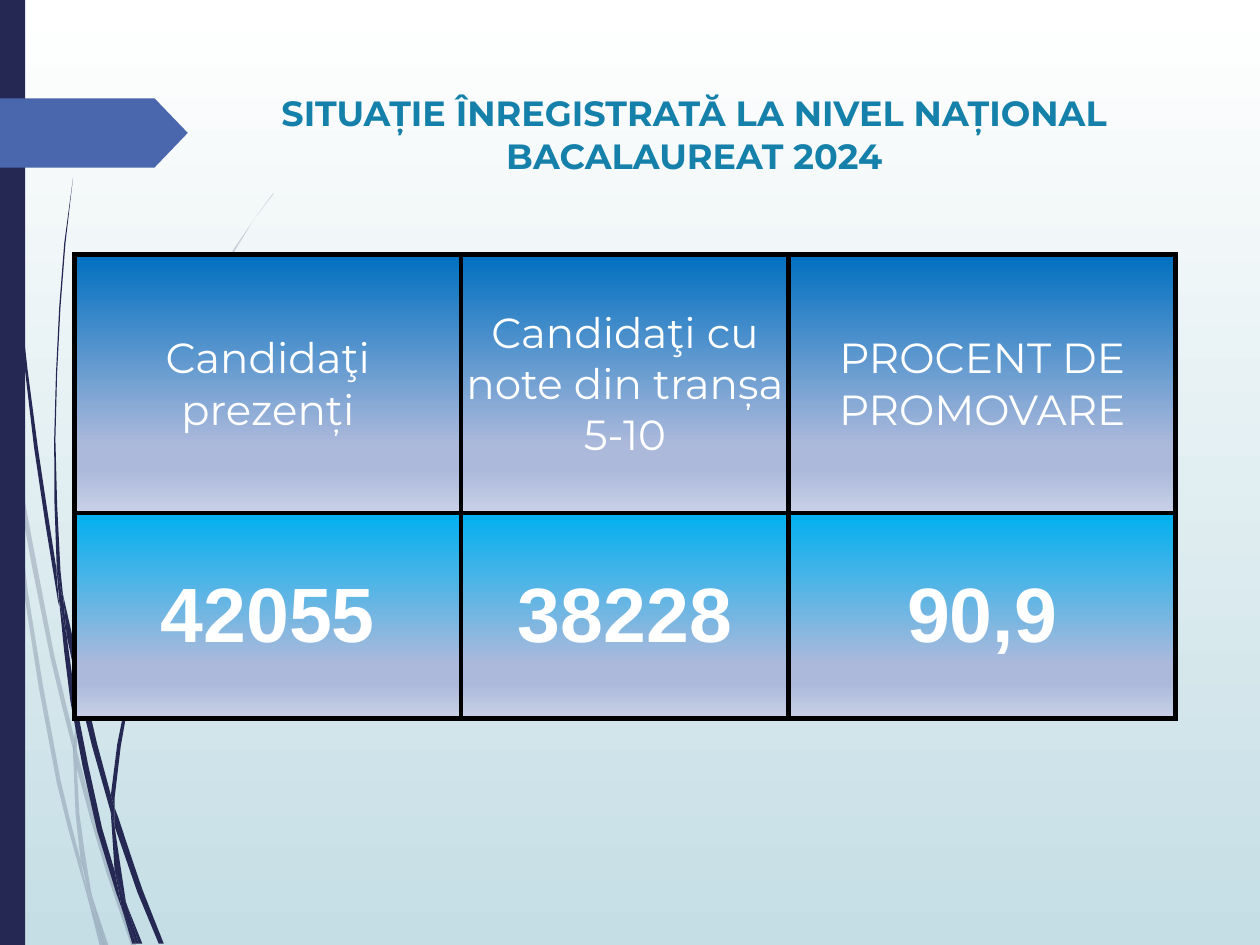
import math

from lxml import etree
from pptx import Presentation
from pptx import util as u
from pptx.dml.color import RGBColor
from pptx.enum import shapes, text
from pptx.oxml.ns import qn

PX = 9144  # 100 px to the inch
NAVY, BLUE, TEAL, WHITE, BLACK = "242852", "4A66AC", "1581AA", "FFFFFF", "000000"
CELL_TAIL = [(74, "ACB9DB"), (83, "ACB9DB"), (100, "C8D1E7")]

# Outline points of each blade of grass, in px
PALE_BLADES = [
    [(8, 350), (6, 322), (0, 282), (0, 299), (7, 344)],
    [(40, 522), (59, 599), (59, 586), (43, 520), (10, 345), (12, 376)],
    [(64, 607), (61, 596), (61, 610), (85, 694), (104, 750), (108, 750), (88, 692)],
    [(83, 750), (86, 750), (73, 711)],
    [(64, 683), (48, 619), (22, 469), (12, 376), (8, 350), (19, 470), (45, 621),
     (64, 693), (70, 714), (69, 707)],
    [(58, 599), (60, 646), (64, 683), (67, 692), (73, 711), (72, 706), (63, 646),
     (61, 610), (61, 608)],
    [(61, 584), (76, 462), (111, 349), (159, 245), (187, 198), (201, 175), (217, 154),
     (217, 153), (201, 175), (186, 197), (158, 244), (110, 348), (75, 461), (59, 584),
     (59, 586), (61, 596)],
    [(70, 714), (79, 750), (82, 750)],
    [(61, 608), (61, 610), (61, 596), (59, 586), (58, 599)],
    [(67, 692), (65, 683), (69, 707), (70, 714), (82, 750), (83, 750), (73, 711)],
]
DARK_BLADES = [
    [(5, 110), (14, 233), (27, 355), (46, 477), (47, 481), (45, 457), (45, 453),
     (30, 355), (15, 232), (6, 109), (4, 48), (3, 0), (2, 0), (3, 48)],
    [(73, 592), (88, 645), (88, 633), (88, 631), (77, 590), (50, 472), (53, 505)],
    [(94, 649), (91, 641), (91, 656), (109, 708), (126, 749), (130, 749), (113, 706)],
    [(91, 691), (81, 657), (60, 556), (53, 505), (47, 477), (56, 557), (77, 659),
     (92, 708), (97, 722), (96, 717)],
    [(50, 472), (48, 453), (44, 349), (48, 244), (52, 193), (58, 141), (51, 193),
     (47, 244), (43, 349), (45, 449), (49, 472)],
    [(110, 749), (113, 749), (101, 719)],
    [(47, 477), (53, 505), (50, 472), (49, 472), (45, 449), (45, 453)],
    [(91, 633), (103, 552), (131, 476), (169, 406), (191, 374), (203, 359), (216, 344),
     (215, 344), (203, 358), (191, 373), (168, 405), (129, 474), (101, 551), (88, 631),
     (91, 641)],
    [(97, 722), (105, 749), (108, 749)],
    [(88, 645), (91, 691), (96, 706), (101, 719), (100, 716), (91, 656), (90, 651)],
    [(88, 645), (90, 651), (91, 656), (91, 641), (88, 631), (88, 633)],
    [(96, 706), (91, 691), (96, 717), (97, 722), (108, 749), (110, 749), (101, 719)],
]


def px(n):
    return u.Emu(round(n * PX))


def color(h):
    return RGBColor.from_string(h)


def gradient(fill, stops):
    """Fill from top to bottom through (percent, colour) stops."""
    fill.gradient()
    fill.gradient_angle = 270
    gs_list = fill._fill._gradFill.find(qn("a:gsLst"))
    for gs in list(gs_list):
        gs_list.remove(gs)
    for pos, h in stops:
        gs = etree.SubElement(gs_list, qn("a:gs"), pos=str(pos * 1000))
        etree.SubElement(gs, qn("a:srgbClr"), val=h)


def paint(sp, h, opacity=100):
    sp.shadow.inherit = False
    sp.fill.solid()
    sp.fill.fore_color.rgb = color(h)
    sp.line.fill.background()
    if opacity < 100:
        clr = sp._element.spPr.find(qn("a:solidFill"))[0]
        etree.SubElement(clr, qn("a:alpha"), val=str(opacity * 1000))


def write(tf, words, size, font, h, bold=False, anchor=None):
    tf.word_wrap = True
    tf.vertical_anchor = anchor
    p = tf.paragraphs[0]
    p.alignment = text.PP_ALIGN.CENTER
    for i, line in enumerate(words.split("\n")):
        if i:
            p.add_line_break()
        r = p.add_run()
        r.text = line
        r.font.size, r.font.name, r.font.bold = u.Pt(size), font, bold
        r.font.color.rgb = color(h)


def unit(a, b):
    d = math.dist(a, b) or 1
    return (b[0] - a[0]) / d, (b[1] - a[1]) / d


def smooth(points, long=60):
    """Bend the long sides of a closed outline, keeping sharp tips."""
    n = len(points)

    def tangent(i, chord):
        a, b, c = points[i - 1], points[i], points[(i + 1) % n]
        v, w = unit(a, b), unit(b, c)
        return chord if v[0] * w[0] + v[1] * w[1] < 0.8 else unit(a, c)

    result = []
    for i, a in enumerate(points):
        j = (i + 1) % n
        b = points[j]
        result.append(a)
        length = math.dist(a, b)
        if length > long:
            chord = unit(a, b)
            start, end = tangent(i, chord), tangent(j, chord)
            result.append(tuple((a[m] + b[m]) / 2 + length / 8 * (start[m] - end[m])
                                for m in (0, 1)))
    return result


def add_grass(s, x, y, blades, opacity):
    group = s.shapes.add_group_shape()
    for blade in blades:
        outline = [(px(x + a), px(y + b)) for a, b in smooth(blade)]
        fb = group.shapes.build_freeform(*outline[0])
        fb.add_line_segments(outline[1:], close=True)
        paint(fb.convert_to_shape(), NAVY, opacity)


def add_side_band(s, x, y, w, h):
    bar = s.shapes.add_shape(shapes.MSO_SHAPE.RECTANGLE, px(x), px(y), px(w), px(h))
    paint(bar, NAVY)
    tag = s.shapes.add_shape(shapes.MSO_SHAPE.PENTAGON, px(x), px(y + 78), px(149), px(55))
    tag.adjustments[0] = 0.48
    paint(tag, BLUE)


def add_title(s, x, y, w, h):
    title = s.shapes.title
    title.left, title.top, title.width, title.height = map(px, (x, y, w, h))
    write(title.text_frame, "SITUAȚIE ÎNREGISTRATĂ LA NIVEL NAȚIONAL\nBACALAUREAT 2024",
          20, "Montserrat", TEAL, bold=True, anchor=text.MSO_ANCHOR.TOP)
    s.shapes._spTree.append(title._element)  # in front of the grass


def add_borders(cell, h, points):
    tc_pr = cell._tc.get_or_add_tcPr()
    for i, side in enumerate(("lnL", "lnR", "lnT", "lnB")):
        ln = etree.Element(qn("a:" + side), w=str(int(u.Pt(points))))
        fill = etree.SubElement(ln, qn("a:solidFill"))
        etree.SubElement(fill, qn("a:srgbClr"), val=h)
        tc_pr.insert(i, ln)


def add_results(s, x, y, w, h):
    # Words, row height, top colour and text format of each row
    rows = [
        (["Candidaţi prezenți", "Candidaţi cu note din tranșa 5-10", "PROCENT DE PROMOVARE"],
         205, "0070C0", dict(size=24, font="Montserrat")),
        (["42055", "38228", "90,9"],
         163, "00B0F0", dict(size=44, font="Arial", bold=True)),
    ]
    table = s.shapes.add_table(2, 3, px(x), px(y), px(w), px(h)).table
    table.first_row = table.horz_banding = False
    for col, width in zip(table.columns, (307, 260, 307)):
        col.width = px(width)
    for i, (words, height, top, style) in enumerate(rows):
        table.rows[i].height = px(height)
        for j, word in enumerate(words):
            cell = table.cell(i, j)
            cell.margin_left = cell.margin_right = cell.margin_top = px(1)
            cell.margin_bottom = 0
            write(cell.text_frame, word, h=WHITE, **style)
            cell.vertical_anchor = text.MSO_ANCHOR.MIDDLE
            gradient(cell.fill, [(0, top)] + CELL_TAIL)
            add_borders(cell, BLACK, 3)


def main():
    prs = Presentation()
    prs.slide_width, prs.slide_height = px(1000), px(750)
    s = prs.slides.add_slide(prs.slide_layouts[5])
    gradient(s.background.fill, [(0, WHITE), (100, "C5DEE5")])
    add_grass(s, 0, 0, PALE_BLADES, 20)
    add_grass(s, 0, 0, DARK_BLADES, 100)
    add_side_band(s, 0, 0, 20, 750)
    add_title(s, 169, 68, 764, 94)
    add_results(s, 59, 202, 874, 368)
    prs.save("out.pptx")


if __name__ == "__main__":
    main()
